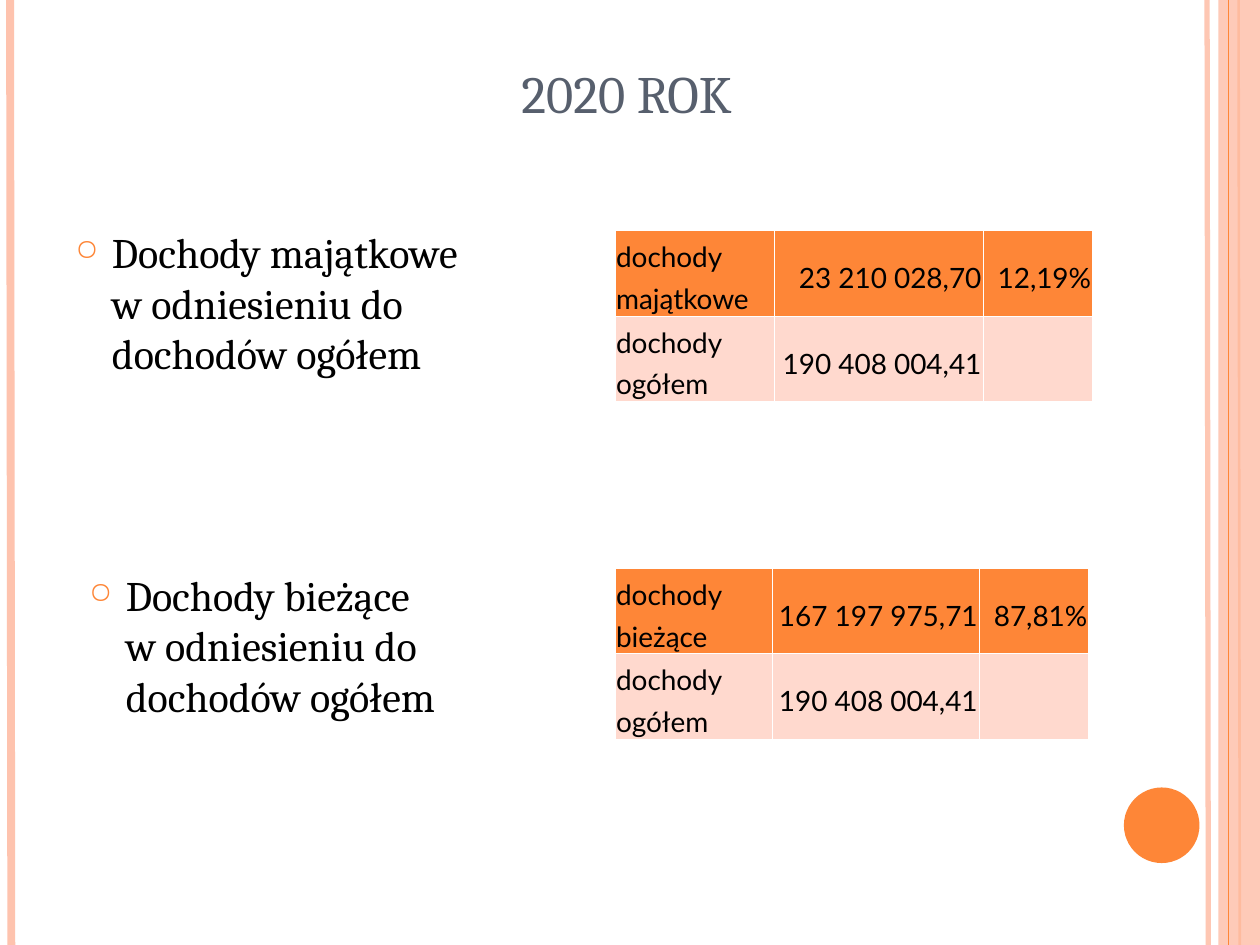
from lxml import etree
from pptx import Presentation, util as u
from pptx.dml.color import RGBColor
from pptx.enum import shapes, text
from pptx.oxml import ns

THEME = {
    "accent": "FE8637", "soft": "FEC3AE", "pale": "FFD9CE", "title": "575F6D",
    "ink": "000000", "border": "FFFFFF",
    "serif": "Cambria", "sans": "Lato",
    "title_size": 30, "body_size": 24, "table_size": 16,
}
SLIDE_SIZE = (10, 7.5)
COLUMNS, ROWS = 100, 75

TITLE = ("2020 ROK", (40.4, 3, 46.2, 7.3))
BULLETS = [
    ("Dochody majątkowe \vw odniesieniu do dochodów ogółem", (5, 17.5, 40, 50)),
    ("Dochody bieżące \vw odniesieniu do dochodów ogółem", (6.1, 44.7, 40, 15.6)),
]
TABLES = [
    {"origin": (48.8, 18.3), "widths": (12.6, 16.6, 8.7), "cells": [
        ("dochody majątkowe", "23 210 028,70", "12,19%"),
        ("dochody ogółem", "190 408 004,41", "")]},
    {"origin": (48.8, 45.1), "widths": (12.5, 16.4, 8.7), "cells": [
        ("dochody bieżące", "167 197 975,71", "87,81%"),
        ("dochody ogółem", "190 408 004,41", "")]},
]
TABLE_ROW = 6.75
BACK_RULES = [(95.8, 95.9, "soft", 3, 93), (0.8, 0.9, "soft", 4.5, 100),
              (98.3, 98.4, "accent", 1.5, 100)]
FRONT_RULES = [(97.5, 97.5, "accent", 0.75, 100)]
BAND = (96.7, 0, 3.3, ROWS)
DISC = (89.2, 62.5, 6, 6)

presentation = Presentation()
presentation.slide_width, presentation.slide_height = map(u.Inches, SLIDE_SIZE)
slide = presentation.slides.add_slide(presentation.slide_layouts[6])


def across(columns):
    return round(presentation.slide_width * columns / COLUMNS)


def down(rows):
    return round(presentation.slide_height * rows / ROWS)


def place(left, top, width, height):
    return across(left), down(top), across(width), down(height)


def colour(name):
    return RGBColor.from_string(THEME[name])


def apply(target, values):
    for name, value in values.items():
        setattr(target, name, value)


def add_element(parent, tag, **attributes):
    element = etree.SubElement(parent, ns.qn(tag))
    for name, value in attributes.items():
        element.set(name, str(value))
    return element


def set_opacity(element, percent):
    if percent < 100:
        add_element(next(element.iter(ns.qn("a:srgbClr"))), "a:alpha", val=percent * 1000)


def set_font(font, face, size, ink):
    apply(font, {"name": THEME[face], "size": u.Pt(THEME[size])})
    font.color.rgb = colour(ink)


def add_rule(start, end, ink, weight, opacity):
    rule = slide.shapes.add_connector(
        shapes.MSO_CONNECTOR.STRAIGHT, across(start), 0, across(end), down(ROWS))
    rule.line.color.rgb = colour(ink)
    rule.line.width = u.Pt(weight)
    properties = rule._element.spPr
    set_opacity(properties, opacity)
    add_element(properties, "a:effectLst")


def add_solid(kind, area, ink, opacity=100):
    shape = slide.shapes.add_shape(kind, *place(*area))
    shape.shadow.inherit = False
    shape.fill.solid()
    shape.fill.fore_color.rgb = colour(ink)
    shape.line.fill.background()
    set_opacity(shape._element.spPr, opacity)


def add_text(words, area, size, ink, anchor):
    frame = slide.shapes.add_textbox(*place(*area)).text_frame
    apply(frame, {"word_wrap": True, "vertical_anchor": anchor})
    paragraph = frame.paragraphs[0]
    paragraph.text = words
    set_font(paragraph.font, "serif", size, ink)
    for run in paragraph.runs:
        set_font(run.font, "serif", size, ink)
    return paragraph


def add_bullet(words, area):
    paragraph = add_text(words, area, "body_size", "ink", text.MSO_ANCHOR.TOP)
    paragraph.space_before = u.Pt(6)
    properties = paragraph._p.get_or_add_pPr()
    properties.set("marL", str(across(2.9)))
    properties.set("indent", str(-across(2.9)))
    default_font = properties.find(ns.qn("a:defRPr"))
    if default_font is not None:
        properties.remove(default_font)
    add_element(add_element(properties, "a:buClr"), "a:srgbClr", val=THEME["accent"])
    add_element(properties, "a:buSzPct", val=70000)
    add_element(properties, "a:buChar", char="○")


def format_cell(cell, words, row, column):
    margin = u.Inches(0.01)
    apply(cell, {"margin_left": margin, "margin_right": margin, "margin_top": margin,
                 "margin_bottom": 0, "vertical_anchor": text.MSO_ANCHOR.MIDDLE})
    paragraph = cell.text_frame.paragraphs[0]
    align = text.PP_ALIGN.RIGHT if column else text.PP_ALIGN.LEFT
    apply(paragraph, {"alignment": align, "line_spacing": 1.25})
    if words:
        run = paragraph.add_run()
        run.text = words
        set_font(run.font, "sans", "table_size", "ink")
    inner_side = "a:lnT" if row else "a:lnB"
    properties = cell._tc.get_or_add_tcPr()
    for side in ("a:lnL", "a:lnR", "a:lnT", "a:lnB"):
        weight = 0.17 if side == inner_side else 0.06
        border = add_element(properties, side, w=u.Pt(weight))
        add_element(add_element(border, "a:solidFill"), "a:srgbClr", val=THEME["border"])
    cell.fill.solid()
    cell.fill.fore_color.rgb = colour("pale" if row else "accent")


def add_income_table(origin, widths, cells):
    area = (*origin, sum(widths), TABLE_ROW * len(cells))
    table = slide.shapes.add_table(len(cells), len(widths), *place(*area)).table
    for column, width in zip(table.columns, widths):
        column.width = across(width)
    for row, values in enumerate(cells):
        table.rows[row].height = down(TABLE_ROW)
        for column, words in enumerate(values):
            format_cell(table.cell(row, column), words, row, column)


for rule in BACK_RULES:
    add_rule(*rule)
add_solid(shapes.MSO_SHAPE.RECTANGLE, BAND, "soft", 87)
for rule in FRONT_RULES:
    add_rule(*rule)
add_solid(shapes.MSO_SHAPE.OVAL, DISC, "accent")
add_text(*TITLE, "title_size", "title", text.MSO_ANCHOR.BOTTOM)
for bullet in BULLETS:
    add_bullet(*bullet)
for income in TABLES:
    add_income_table(**income)
presentation.save("out.pptx")
